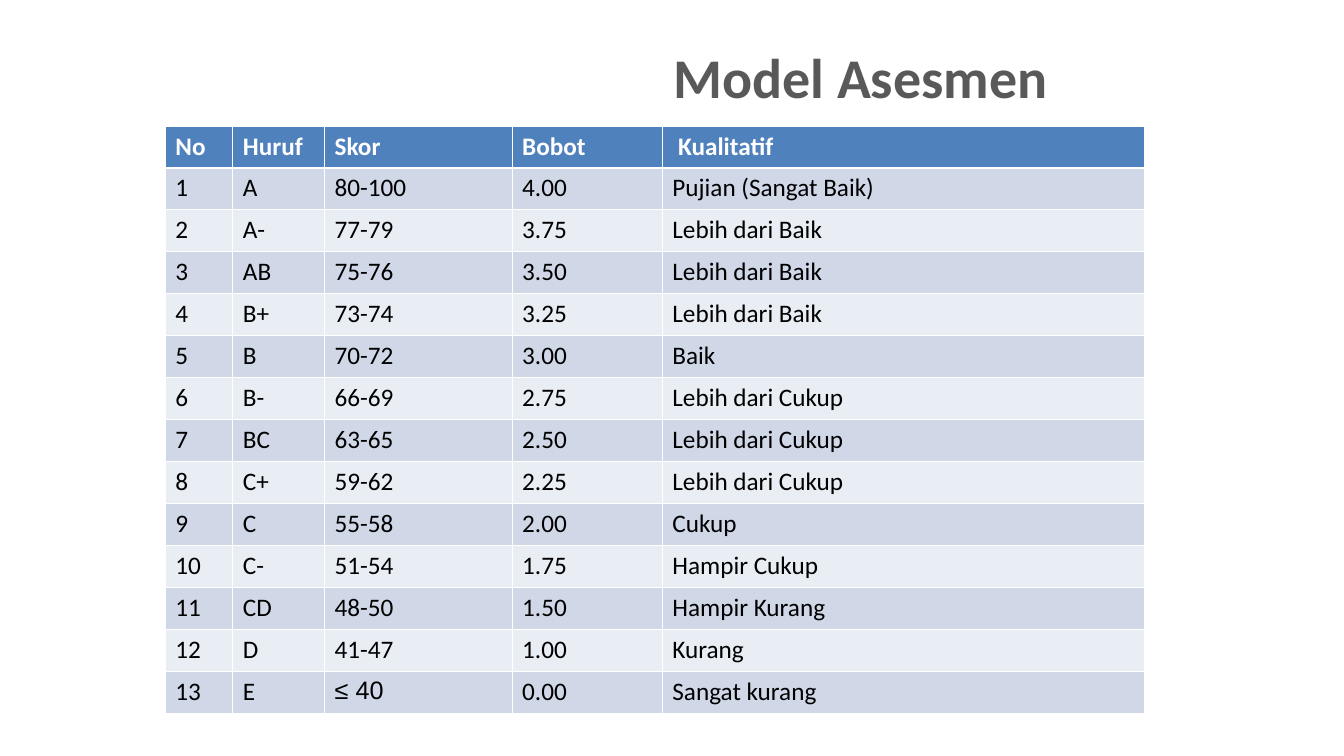
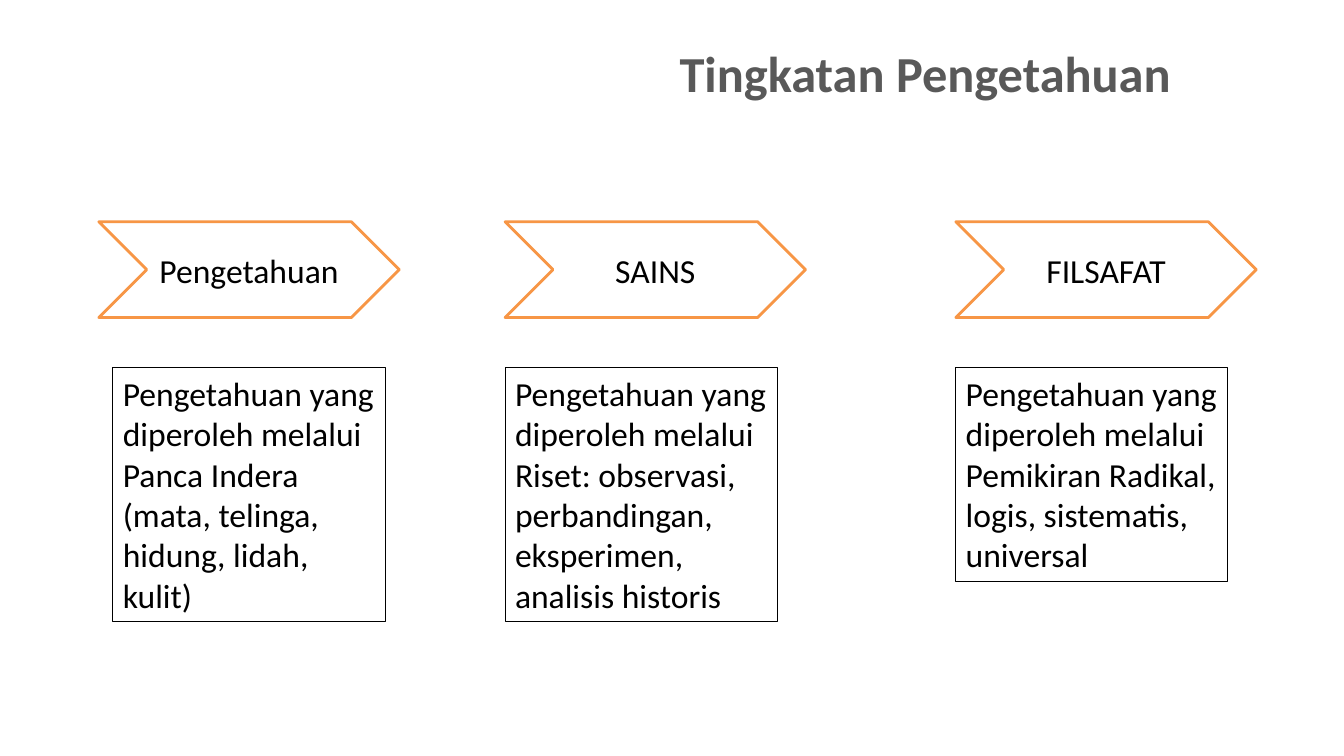
from pptx import Presentation
from pptx.dml.color import RGBColor
from pptx.enum.shapes import MSO_SHAPE
from pptx.enum.text import MSO_ANCHOR, MSO_AUTO_SIZE, PP_ALIGN
from pptx.util import Inches, Pt

CHEVRON, RECTANGLE = MSO_SHAPE.CHEVRON, MSO_SHAPE.RECTANGLE
TOP, MIDDLE = MSO_ANCHOR.TOP, MSO_ANCHOR.MIDDLE
LEFT, CENTER = PP_ALIGN.LEFT, PP_ALIGN.CENTER
NO_AUTOFIT, GROW = MSO_AUTO_SIZE.NONE, MSO_AUTO_SIZE.SHAPE_TO_FIT_TEXT
TITLE_ONLY = 5

COLORS = {
    "title": "595959",
    "text": "000000",
    "white": "FFFFFF",
    "header": "4F81BD",
    "odd_row": "D0D8E8",
    "even_row": "E9EDF4",
    "chevron": "F79646",
}

GRADE_HEADER = ("No", "Huruf", "Skor", "Bobot", " Kualitatif")
GRADES = [
    ("A", "80-100", "4.00", "Pujian (Sangat Baik)"),
    ("A-", "77-79", "3.75", "Lebih dari Baik"),
    ("AB", "75-76", "3.50", "Lebih dari Baik"),
    ("B+", "73-74", "3.25", "Lebih dari Baik"),
    ("B", "70-72", "3.00", "Baik"),
    ("B-", "66-69", "2.75", "Lebih dari Cukup"),
    ("BC", "63-65", "2.50", "Lebih dari Cukup"),
    ("C+", "59-62", "2.25", "Lebih dari Cukup"),
    ("C", "55-58", "2.00", "Cukup"),
    ("C-", "51-54", "1.75", "Hampir Cukup"),
    ("CD", "48-50", "1.50", "Hampir Kurang"),
    ("D", "41-47", "1.00", "Kurang"),
    ("E", "≤ 40", "0.00", "Sangat kurang"),
]
COLUMN_WIDTHS = (0.67, 0.91, 1.86, 1.49, 4.78)
TABLE_LEFT, TABLE_TOP, TABLE_HEIGHT = 1.64, 1.25, 5.83

LEVELS = [
    ("Pengetahuan", 0.98, 1.12, 2.52,
     "Pengetahuan yang diperoleh melalui Panca Indera (mata, telinga, hidung, lidah, kulit)"),
    ("SAINS", 5.01, 5.01, 2.52,
     "Pengetahuan yang diperoleh melalui Riset: observasi, perbandingan, eksperimen, analisis historis"),
    ("FILSAFAT", 9.48, 9.48, 2.12,
     "Pengetahuan yang diperoleh melalui Pemikiran Radikal, logis, sistematis, universal"),
]
CHEVRON_TOP, CHEVRON_WIDTH, CHEVRON_HEIGHT = 2.2, 2.98, 0.95
BOX_TOP, BOX_WIDTH = 3.65, 2.7


def color(name):
    return RGBColor.from_string(COLORS[name])


def write(frame, text, size=24, fill="text", bold=False, font="Calibri",
          align=LEFT, anchor=TOP):
    frame.word_wrap = True
    frame.vertical_anchor = anchor
    paragraph = frame.paragraphs[0]
    paragraph.alignment = align
    run = paragraph.add_run()
    run.text = text
    run.font.name = font
    run.font.size = Pt(size)
    run.font.bold = bold
    run.font.color.rgb = color(fill)


def add_titled_slide(presentation, text, left, height, size):
    slide = presentation.slides.add_slide(presentation.slide_layouts[TITLE_ONLY])
    title = slide.shapes.title
    title.left, title.top = Inches(left), Inches(0.37)
    title.width, title.height = Inches(5.67), Inches(height)
    title.text_frame.auto_size = NO_AUTOFIT
    write(title.text_frame, text, size=size, fill="title", bold=True)
    return slide


def add_outline(slide, kind, left, top, width, height, line, weight, fill=None):
    shape = slide.shapes.add_shape(
        kind, Inches(left), Inches(top), Inches(width), Inches(height))
    shape.shadow.inherit = False
    if fill:
        shape.fill.solid()
        shape.fill.fore_color.rgb = color(fill)
    else:
        shape.fill.background()
    shape.line.color.rgb = color(line)
    shape.line.width = Pt(weight)
    return shape


def add_grade_table(slide):
    rows = [GRADE_HEADER]
    rows += [(str(number), *grade) for number, grade in enumerate(GRADES, 1)]
    table = slide.shapes.add_table(
        len(rows), len(COLUMN_WIDTHS), Inches(TABLE_LEFT), Inches(TABLE_TOP),
        Inches(sum(COLUMN_WIDTHS)), Inches(TABLE_HEIGHT)).table
    for column, width in zip(table.columns, COLUMN_WIDTHS):
        column.width = Inches(width)
    for row_index, row in enumerate(rows):
        is_header = row_index == 0
        band = "header" if is_header else "odd_row" if row_index % 2 else "even_row"
        for column_index, text in enumerate(row):
            cell = table.cell(row_index, column_index)
            cell.fill.solid()
            cell.fill.fore_color.rgb = color(band)
            write(cell.text_frame, text, size=18, bold=is_header,
                  fill="white" if is_header else "text",
                  font="Arial" if "≤" in text else "Calibri")


def add_levels(slide):
    for name, chevron_left, box_left, box_height, description in LEVELS:
        chevron = add_outline(slide, CHEVRON, chevron_left, CHEVRON_TOP,
                              CHEVRON_WIDTH, CHEVRON_HEIGHT, "chevron", 2, fill="white")
        write(chevron.text_frame, name, align=CENTER, anchor=MIDDLE)
        box = add_outline(slide, RECTANGLE, box_left, BOX_TOP,
                          BOX_WIDTH, box_height, "text", 0.75)
        box.text_frame.auto_size = GROW
        write(box.text_frame, description)


def main():
    presentation = Presentation()
    presentation.slide_width = Inches(13.33)
    presentation.slide_height = Inches(7.5)
    add_grade_table(add_titled_slide(presentation, "Model Asesmen", 6.58, 0.74, 40))
    add_levels(add_titled_slide(presentation, "Tingkatan Pengetahuan", 6.64, 0.83, 36))
    presentation.save("out.pptx")


if __name__ == "__main__":
    main()
